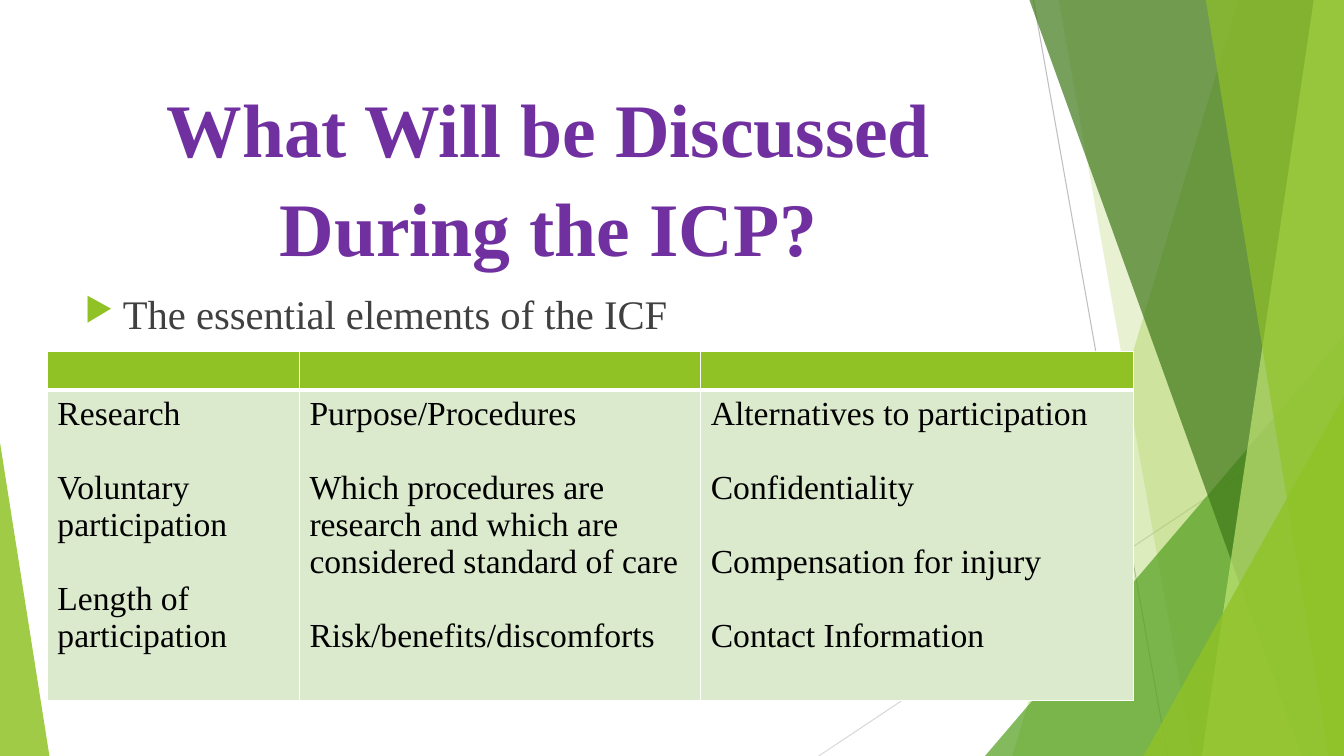
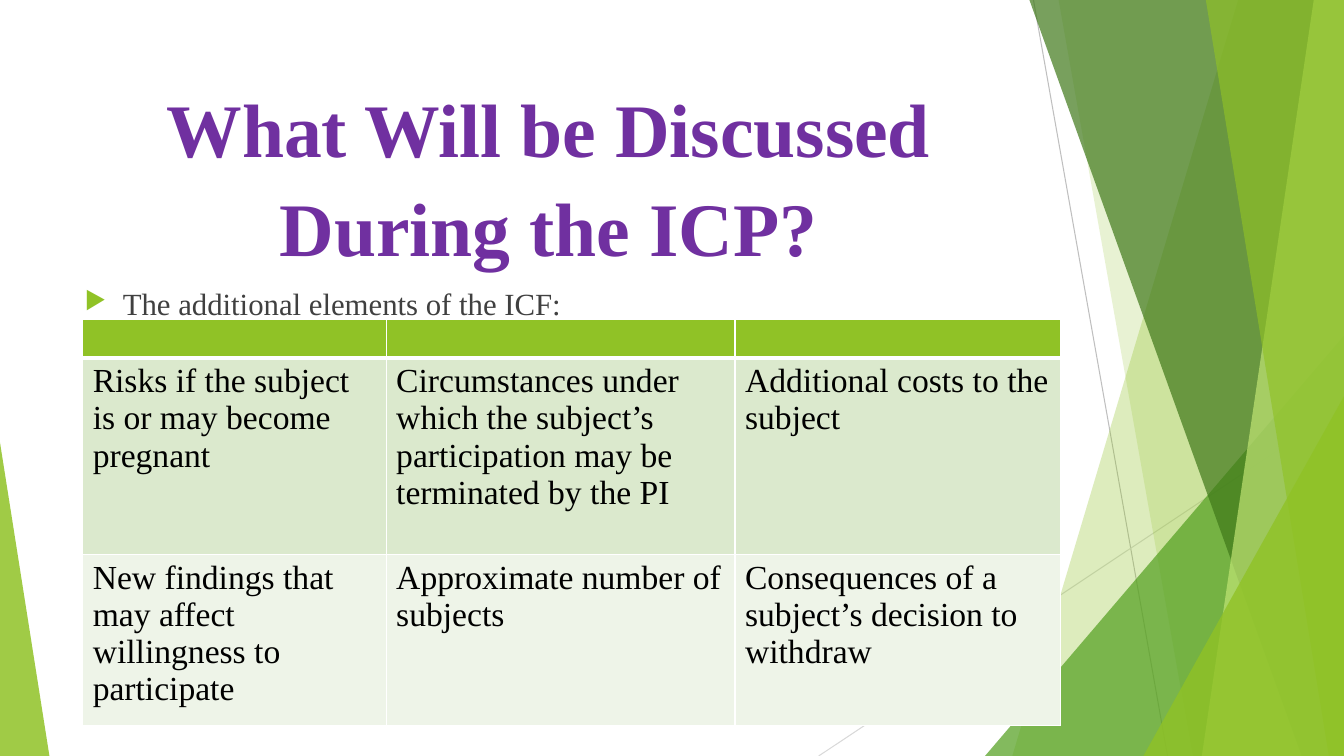
from lxml import etree
from pptx import Presentation
from pptx.dml.color import RGBColor
from pptx.enum.shapes import MSO_CONNECTOR, MSO_SHAPE
from pptx.enum.text import MSO_ANCHOR, PP_ALIGN
from pptx.oxml.ns import qn
from pptx.util import Inches, Pt

STRAIGHT = MSO_CONNECTOR.STRAIGHT
TRIANGLE = MSO_SHAPE.ISOSCELES_TRIANGLE
TOP = MSO_ANCHOR.TOP
CENTER, LEFT = PP_ALIGN.CENTER, PP_ALIGN.LEFT

WIDTH, HEIGHT = 13.33, 7.5
FONT = "Times New Roman"
WHITE, BLACK, GRAY, PURPLE = "FFFFFF", "000000", "404040", "7030A0"
LIME, GREEN, FOREST, PALE_LIME = "90C226", "54A021", "3F7819", "C0E474"
ROW_TINTS = ["DBE9CD", "EEF4E8"]
TITLE = "What Will be Discussed During the ICP?"
TOPIC_SIZE = 24
TOPIC_GAP = 26.5
HEADER_HEIGHT = 0.38

HAIRLINES = [
    ((10.25, 0), (11.58, HEIGHT), "BFBFBF"),
    ((WIDTH, 4.03), (8.12, HEIGHT), "D9D9D9"),
]
BACK_BANDS = [(12.28, 10.04, LIME, 30), (10.5, 11.83, LIME, 20)]
FRONT_BANDS = [
    (10.21, 12.91, FOREST, 70),
    (13.03, 11.92, PALE_LIME, 70),
    (11.96, 13.18, LIME, 65),
]
BACK_WEDGE = (9.77, 3.33, 3.56, 1, GREEN, 72)
FRONT_WEDGES = [(11.34, 3.93, 1.99, 1, LIME, 80), (0, 4.39, 0.49, 0, LIME, 85)]


def color(hex_code):
    return RGBColor.from_string(hex_code)


def tint(shape, hex_code, opacity):
    shape.shadow.inherit = False
    shape.line.fill.background()
    shape.fill.solid()
    shape.fill.fore_color.rgb = color(hex_code)
    tone = shape.element.spPr.find(qn("a:solidFill"))[0]
    etree.SubElement(tone, qn("a:alpha"), val=str(opacity * 1000))


def add_hairline(slide, start, end, hex_code):
    points = [Inches(v) for v in (*start, *end)]
    hairline = slide.shapes.add_connector(STRAIGHT, *points)
    hairline.line.color.rgb = color(hex_code)
    hairline.line.width = Pt(0.75)
    etree.SubElement(hairline.element.spPr, qn("a:effectLst"))


def add_band(slide, top_x, bottom_x, hex_code, opacity):
    outline = slide.shapes.build_freeform(Inches(top_x), 0)
    corners = [(WIDTH, 0), (WIDTH, HEIGHT), (bottom_x, HEIGHT)]
    outline.add_line_segments([(Inches(x), Inches(y)) for x, y in corners])
    tint(outline.convert_to_shape(), hex_code, opacity)


def add_wedge(slide, left, top, width, apex, hex_code, opacity):
    box = [Inches(v) for v in (left, top, width, HEIGHT - top)]
    wedge = slide.shapes.add_shape(TRIANGLE, *box)
    wedge.adjustments[0] = apex
    tint(wedge, hex_code, opacity)


def add_backdrop(slide):
    for hairline in HAIRLINES:
        add_hairline(slide, *hairline)
    for band in BACK_BANDS:
        add_band(slide, *band)
    add_wedge(slide, *BACK_WEDGE)
    for band in FRONT_BANDS:
        add_band(slide, *band)
    for wedge in FRONT_WEDGES:
        add_wedge(slide, *wedge)


def write(paragraph, text, size, hex_code, bold=False):
    run = paragraph.add_run()
    run.text = text
    run.font.name = FONT
    run.font.size = Pt(size)
    run.font.bold = bold
    run.font.color.rgb = color(hex_code)


def add_line_of_text(slide, box, text, size, hex_code, align, bold=False):
    frame = slide.shapes.add_textbox(*[Inches(v) for v in box]).text_frame
    frame.word_wrap = True
    frame.vertical_anchor = TOP
    paragraph = frame.paragraphs[0]
    paragraph.alignment = align
    paragraph.line_spacing = 1.1
    write(paragraph, text, size, hex_code, bold)
    return paragraph


def add_bullet(paragraph):
    props = paragraph._p.get_or_add_pPr()
    props.set("marL", str(Inches(0.38)))
    props.set("indent", str(-Inches(0.38)))
    bullet_color = etree.SubElement(props, qn("a:buClr"))
    etree.SubElement(bullet_color, qn("a:srgbClr"), val=LIME)
    etree.SubElement(props, qn("a:buSzPct"), val="80000")
    etree.SubElement(props, qn("a:buChar"), char="▶")


def set_borders(cell, **widths):
    props = cell._tc.get_or_add_tcPr()
    for position, side in enumerate("LRTB"):
        edge = etree.Element(qn("a:ln" + side), w=str(Pt(widths.get(side, 1))))
        fill = etree.SubElement(edge, qn("a:solidFill"))
        etree.SubElement(fill, qn("a:srgbClr"), val=WHITE)
        props.insert(position, edge)


def fill_cell(cell, hex_code):
    cell.fill.solid()
    cell.fill.fore_color.rgb = color(hex_code)


def write_topics(cell, topics):
    frame = cell.text_frame
    for index, topic in enumerate(topics):
        paragraph = frame.add_paragraph() if index else frame.paragraphs[0]
        if index:
            paragraph.space_before = Pt(TOPIC_GAP)
        write(paragraph, topic, TOPIC_SIZE, BLACK)


def add_elements_table(slide, left, top, col_widths, row_heights, rows):
    heights = [HEADER_HEIGHT, *row_heights]
    box = [Inches(v) for v in (left, top, sum(col_widths), sum(heights))]
    table = slide.shapes.add_table(len(heights), len(col_widths), *box).table
    for column, width in zip(table.columns, col_widths):
        column.width = Inches(width)
    for row, height in zip(table.rows, heights):
        row.height = Inches(height)
    for header in table.rows[0].cells:
        header.margin_top = header.margin_bottom = 0
        fill_cell(header, LIME)
        set_borders(header, B=3)
    for index, row in enumerate(rows):
        for cell, topics in zip(table.rows[index + 1].cells, row):
            fill_cell(cell, ROW_TINTS[index % 2])
            set_borders(cell, T=1 if index else 3)
            write_topics(cell, topics)


def add_elements_slide(deck, heading, heading_box, heading_size, **elements):
    slide = deck.slides.add_slide(deck.slide_layouts[6])
    add_backdrop(slide)
    add_line_of_text(slide, (0.74, 0.67, 9.4, 1.87), TITLE, 54, PURPLE, CENTER, True)
    add_bullet(add_line_of_text(slide, heading_box, heading, heading_size, GRAY, LEFT))
    add_elements_table(slide, **elements)


def main():
    deck = Presentation()
    deck.slide_width, deck.slide_height = Inches(WIDTH), Inches(HEIGHT)
    add_elements_slide(
        deck, "The essential elements of the ICF", (0.74, 2.77, 8.63, 4.54), 29,
        left=0.47, top=3.49, col_widths=[2.5, 3.98, 4.29], row_heights=[3.08],
        rows=[[
            ["Research", "Voluntary participation", "Length of participation"],
            ["Purpose/Procedures",
             "Which procedures are research and which are considered standard of care",
             "Risk/benefits/discomforts"],
            ["Alternatives to participation", "Confidentiality",
             "Compensation for injury", "Contact Information"],
        ]],
    )
    add_elements_slide(
        deck, "The additional elements of the ICF:", (0.74, 2.74, 11.77, 4.54), 22,
        left=0.82, top=3.17, col_widths=[3.01, 3.46, 3.23], row_heights=[1.95, 1.58],
        rows=[
            [["Risks if the subject is or may become pregnant"],
             ["Circumstances under which the subject’s participation may be "
              "terminated by the PI"],
             ["Additional costs to the subject"]],
            [["New findings that may affect willingness to participate"],
             ["Approximate number of subjects"],
             ["Consequences of a subject’s decision to withdraw"]],
        ],
    )
    deck.save("out.pptx")


if __name__ == "__main__":
    main()
